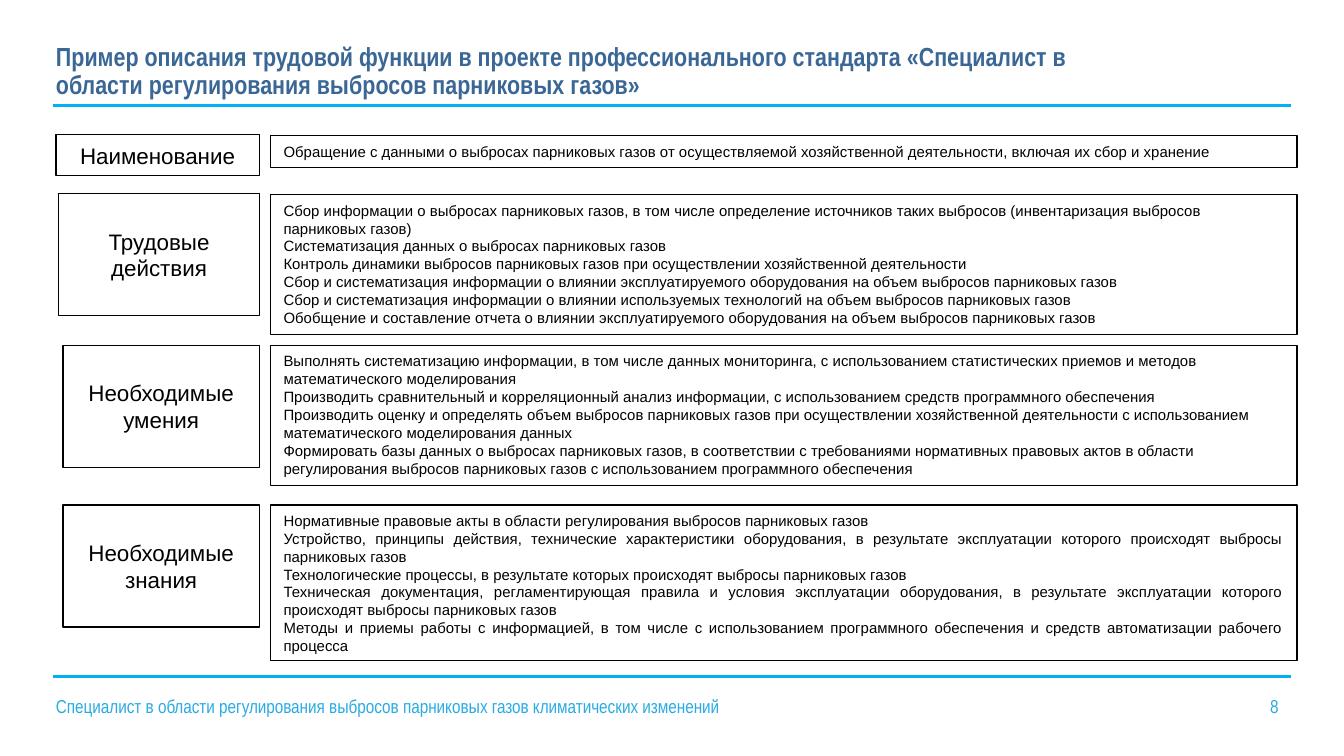
from dataclasses import dataclass

from lxml import etree
from pptx import Presentation
from pptx.dml.color import RGBColor
from pptx.enum.shapes import MSO_CONNECTOR, MSO_SHAPE
from pptx.enum.text import MSO_ANCHOR, MSO_AUTO_SIZE, PP_ALIGN
from pptx.oxml.ns import qn
from pptx.util import Pt

LEFT, CENTER, JUSTIFY = PP_ALIGN.LEFT, PP_ALIGN.CENTER, PP_ALIGN.JUSTIFY
TOP, MIDDLE, BOTTOM = MSO_ANCHOR.TOP, MSO_ANCHOR.MIDDLE, MSO_ANCHOR.BOTTOM
RECTANGLE, STRAIGHT = MSO_SHAPE.RECTANGLE, MSO_CONNECTOR.STRAIGHT
FIXED_SIZE = MSO_AUTO_SIZE.NONE
TITLE_ONLY = 5


@dataclass(frozen=True)
class Theme:
    text_color: RGBColor = RGBColor(0x00, 0x00, 0x00)
    title_color: RGBColor = RGBColor(0x3A, 0x67, 0x96)
    rule_color: RGBColor = RGBColor(0x00, 0xB0, 0xF0)
    footer_color: RGBColor = RGBColor(0x29, 0xAB, 0xE2)
    body_font: str = "Arial"
    heading_font: str = "Arial Narrow"
    title_size: float = 14
    label_size: float = 12
    footer_size: float = 10
    body_size: float = 8
    rule_width: float = 1.5
    border_width: float = 0.75


class SlideBuilder:
    """Holds the style and the current slide; lengths are in points."""

    def __init__(self, page, theme):
        self.page = page
        self.theme = theme

    def set_text(self, box, lines, font, size, color, align=LEFT,
                 anchor=TOP, margins=(7.2, 3.6, 7.2, 3.6), bold=False):
        frame = box.text_frame
        frame.word_wrap = True
        frame.auto_size = FIXED_SIZE
        frame.vertical_anchor = anchor
        (frame.margin_left, frame.margin_top,
         frame.margin_right, frame.margin_bottom) = map(Pt, margins)
        frame.text = "\n".join(lines)
        for para in frame.paragraphs:
            para.alignment = align
            para.font.name = font
            para.font.size = Pt(size)
            para.font.bold = bold
            para.font.color.rgb = color

    def title(self, text, left, top, width, height):
        box = self.page.shapes.title
        box.left, box.top, box.width, box.height = map(Pt, (left, top, width, height))
        theme = self.theme
        self.set_text(box, [text], theme.heading_font, theme.title_size,
                      theme.title_color, anchor=BOTTOM,
                      margins=(0, 3.6, 7.2, 3.6), bold=True)
        box.text_frame.paragraphs[0].line_spacing = 0.9

    def rule(self, left, right, y):
        line = self.page.shapes.add_connector(STRAIGHT, Pt(left), Pt(y), Pt(right), Pt(y))
        line.line.color.rgb = self.theme.rule_color
        line.line.width = Pt(self.theme.rule_width)
        properties = line._element.spPr
        etree.SubElement(properties, qn("a:effectLst"))

    def framed_text(self, lines, left, top, width, height, size, align, anchor):
        box = self.page.shapes.add_shape(RECTANGLE, *map(Pt, (left, top, width, height)))
        box.shadow.inherit = False
        box.fill.background()
        box.line.color.rgb = self.theme.text_color
        box.line.width = Pt(self.theme.border_width)
        self.set_text(box, lines, self.theme.body_font, size,
                      self.theme.text_color, align, anchor)

    def footer(self, text, number, left, top, width, height, tab):
        box = self.page.shapes.add_textbox(*map(Pt, (left, top, width, height)))
        box.text_frame.text = f"{text}\t{number}"
        # The page number sits at a right-aligned tab stop
        properties = box.text_frame.paragraphs[0]._p.get_or_add_pPr()
        stops = etree.SubElement(properties, qn("a:tabLst"))
        etree.SubElement(stops, qn("a:tab"), pos=str(Pt(tab)), algn="r")
        frame = box.text_frame
        frame.word_wrap = True
        frame.margin_left = frame.margin_top = frame.margin_right = 0
        font = frame.paragraphs[0].font
        font.name = self.theme.heading_font
        font.size = Pt(self.theme.footer_size)
        font.color.rgb = self.theme.footer_color


LABEL_RIGHT = 139
DETAIL_LEFT, DETAIL_WIDTH = 144.8, 550

# Label, its (left, top, height), detail (top, height), alignment, detail lines
SECTIONS = [
    ("Наименование", (30, 72.2, 21.8), (72.7, 17.2), JUSTIFY, [
        "Обращение с данными о выбросах парниковых газов от осуществляемой хозяйственной деятельности, включая их сбор и хранение",
    ]),
    ("Трудовые действия", (31.5, 103.7, 65.4), (104.3, 75), LEFT, [
        "Сбор информации о выбросах парниковых газов, в том числе определение источников таких выбросов (инвентаризация выбросов парниковых газов)",
        "Систематизация данных о выбросах парниковых газов",
        "Контроль динамики выбросов парниковых газов при осуществлении хозяйственной деятельности",
        "Сбор и систематизация информации о влиянии эксплуатируемого оборудования на объем выбросов парниковых газов",
        "Сбор и систематизация информации о влиянии используемых технологий на объем выбросов парниковых газов",
        "Обобщение и составление отчета о влиянии эксплуатируемого оборудования на объем выбросов парниковых газов",
    ]),
    ("Необходимые умения", (33.7, 185, 65.4), (185, 75), LEFT, [
        "Выполнять систематизацию информации, в том числе данных мониторинга, с использованием статистических приемов и методов математического моделирования",
        "Производить сравнительный и корреляционный анализ информации, с использованием средств программного обеспечения",
        "Производить оценку и определять объем выбросов парниковых газов при осуществлении хозяйственной деятельности с использованием математического моделирования данных",
        "Формировать базы данных о выбросах парниковых газов, в соответствии с требованиями нормативных правовых актов в области регулирования выбросов парниковых газов с использованием программного обеспечения",
    ]),
    ("Необходимые знания", (33.7, 270.5, 65.4), (270.5, 83.4), JUSTIFY, [
        "Нормативные правовые акты в области регулирования выбросов парниковых газов",
        "Устройство, принципы действия, технические характеристики оборудования, в результате эксплуатации которого происходят выбросы парниковых газов",
        "Технологические процессы, в результате которых происходят выбросы парниковых газов",
        "Техническая документация, регламентирующая правила и условия эксплуатации оборудования, в результате эксплуатации которого происходят выбросы парниковых газов",
        "Методы и приемы работы с информацией, в том числе с использованием программного обеспечения и средств автоматизации рабочего процесса",
    ]),
]


def main():
    deck = Presentation()
    deck.slide_width, deck.slide_height = Pt(720), Pt(405)
    page = deck.slides.add_slide(deck.slide_layouts[TITLE_ONLY])
    theme = Theme()
    builder = SlideBuilder(page, theme)

    # Heading and the two rules
    builder.title("Пример описания трудовой функции в проекте профессионального стандарта «Специалист в области регулирования выбросов парниковых газов»",
                  30, 20, 562.5, 37.5)
    for y in (56.4, 362.3):
        builder.rule(28.6, 691.4, y)

    # Sections: label on the left, details on the right
    for label, label_place, detail_place, align, lines in SECTIONS:
        left, top, height = label_place
        builder.framed_text([label], left, top, LABEL_RIGHT - left, height,
                            theme.label_size, CENTER, MIDDLE)
        top, height = detail_place
        builder.framed_text(lines, DETAIL_LEFT, top, DETAIL_WIDTH, height,
                            theme.body_size, align, TOP)

    # Footer with page number
    builder.footer("Специалист в области регулирования выбросов парниковых газов климатических изменений",
                   8, 30, 372.3, 663, 21.6, tab=655)

    deck.save("out.pptx")


if __name__ == "__main__":
    main()
